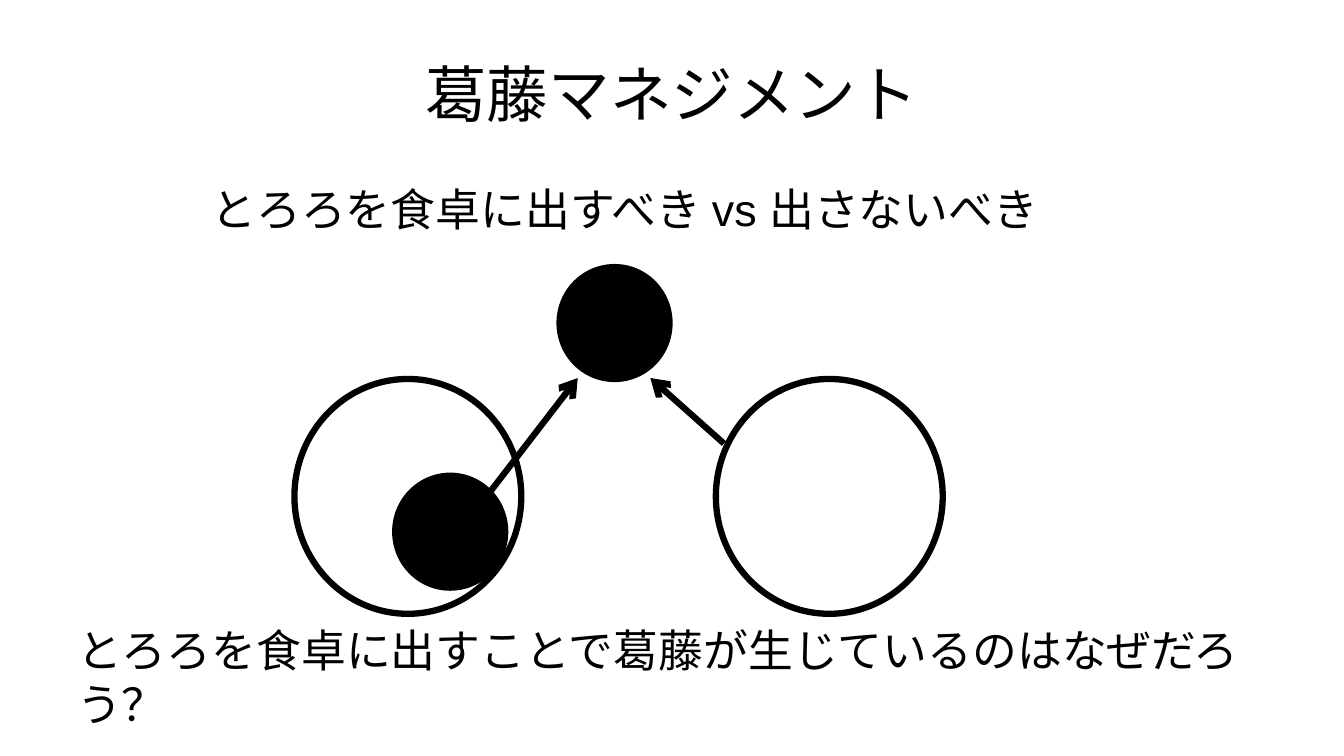
from lxml.etree import SubElement
from pptx import Presentation
from pptx.dml.color import RGBColor
from pptx.enum.shapes import MSO_CONNECTOR, MSO_SHAPE
from pptx.enum.text import MSO_ANCHOR, PP_ALIGN
from pptx.oxml.ns import qn
from pptx.util import Inches, Pt

BLACK = RGBColor(0, 0, 0)
WHITE = RGBColor(255, 255, 255)
WIDTH, HEIGHT = 13.33, 7.5
MARGIN = WIDTH * 0.05
CONTENT_WIDTH = WIDTH * 0.9
INDENT = 3 * 32 / 72  # three full-width characters
LINE_WIDTH = Pt(4.5)

TITLE = "葛藤マネジメント"
STATEMENTS = [  # text, top, indent
    ("とろろを食卓に出すべき vs 出さないべき", 1.75, INDENT),
    ("とろろを食卓に出すことで葛藤が生じているのはなぜだろう？", 6.13, 0),
]
LARGE, SMALL = (2.25, 2.33), (1.09, 1.11)
CIRCLES = [  # left, top, size, fill
    (2.92, 3.76, LARGE, WHITE),
    (7.1, 3.76, LARGE, WHITE),
    (5.55, 2.65, SMALL, BLACK),
    (3.92, 4.72, SMALL, BLACK),
]
ARROWS = [  # start, end
    ((4.83, 4.92), (5.73, 3.75)),
    ((7.18, 4.4), (6.45, 3.75)),
]


def write(shape, text, size, alignment, anchor):
    frame = shape.text_frame
    frame.word_wrap = True
    frame.vertical_anchor = anchor
    paragraph = frame.paragraphs[0]
    paragraph.text = text
    paragraph.alignment = alignment
    for name, value in {"name": "Arial", "size": Pt(size)}.items():
        setattr(paragraph.font, name, value)
    paragraph.font.color.rgb = BLACK


def set_outline(shape):
    shape.line.color.rgb = BLACK
    shape.line.width = LINE_WIDTH


def add_circle(slide, left, top, size, fill):
    circle = slide.shapes.add_shape(
        MSO_SHAPE.OVAL, *map(Inches, (left, top, *size)))
    circle.shadow.inherit = False
    circle.fill.solid()
    circle.fill.fore_color.rgb = fill
    set_outline(circle)


def add_arrow(slide, start, end):
    arrow = slide.shapes.add_connector(
        MSO_CONNECTOR.STRAIGHT, *map(Inches, (*start, *end)))
    set_outline(arrow)
    SubElement(arrow.line._get_or_add_ln(), qn("a:tailEnd"), type="arrow")
    SubElement(arrow._element.spPr, qn("a:effectLst"))


def main():
    presentation = Presentation()
    presentation.slide_width = Inches(WIDTH)
    presentation.slide_height = Inches(HEIGHT)
    slide = presentation.slides.add_slide(presentation.slide_layouts[5])

    title = slide.shapes.title
    box = {"left": MARGIN, "top": HEIGHT * 0.04,
           "width": CONTENT_WIDTH, "height": HEIGHT / 6}
    for name, value in box.items():
        setattr(title, name, Inches(value))
    write(title, TITLE, 44, PP_ALIGN.CENTER, MSO_ANCHOR.MIDDLE)

    for text, top, indent in STATEMENTS:
        statement = slide.shapes.add_textbox(*map(Inches, (
            MARGIN + indent, top, CONTENT_WIDTH - indent, HEIGHT * 0.08)))
        write(statement, text, 32, PP_ALIGN.LEFT, MSO_ANCHOR.TOP)
    for circle in CIRCLES:
        add_circle(slide, *circle)
    for arrow in ARROWS:
        add_arrow(slide, *arrow)

    presentation.save("out.pptx")


if __name__ == "__main__":
    main()
